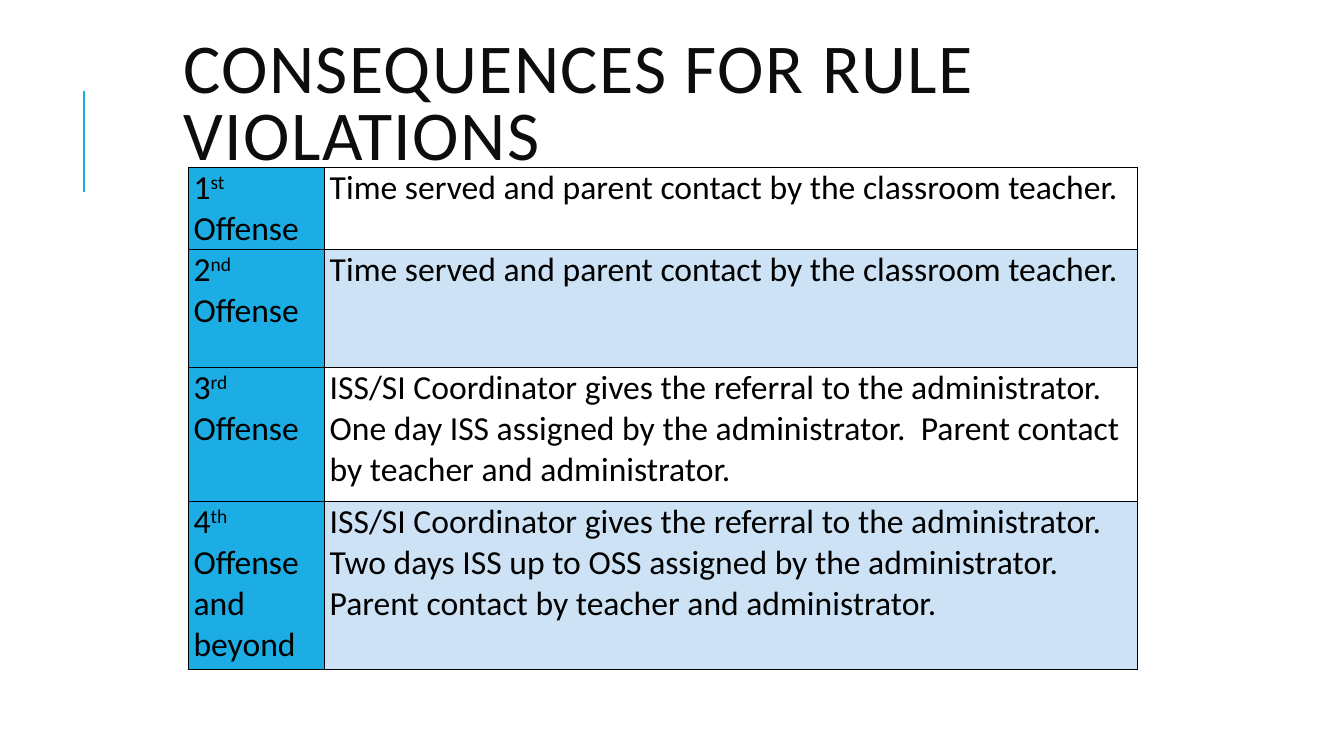
"""Build the slide on consequences for rule violations."""
from lxml.etree import SubElement as Sub
from pptx import Presentation
from pptx.dml.color import RGBColor
from pptx.enum.shapes import MSO_CONNECTOR as Link
from pptx.enum.text import MSO_ANCHOR as Anchor, MSO_AUTO_SIZE as Fit, PP_ALIGN as Align
from pptx.oxml.ns import qn
from pptx.util import Pt

PX = 9144
BLUE = RGBColor(0x1C, 0xAD, 0xE4)
PALE = RGBColor(0xCD, 0xE3, 0xF5)
WHITE = RGBColor(0xFF, 0xFF, 0xFF)
BLACK = RGBColor(0x00, 0x00, 0x00)
INK = RGBColor(0x0D, 0x0D, 0x0D)

HEAD = {"name": "Calibri", "size": Pt(50), "bold": False}
BODY = {"name": "Calibri", "size": Pt(24), "bold": False}
INSET = {"margin_left": 5 * PX, "margin_right": 5 * PX,
         "margin_top": 0, "margin_bottom": 0}
COLS = [135, 806]
SERVED = "Time served and parent contact by the classroom teacher."
REFER = "ISS/SI Coordinator gives the referral to the administrator."
ROWS = [
    (75, "1", "st", " Offense", SERVED),
    (117, "2", "nd", " Offense", SERVED),
    (133, "3", "rd", " Offense",
     REFER + " One day ISS assigned by the administrator.  "
     "Parent contact by teacher and administrator."),
    (167, "4", "th", " Offense and beyond",
     REFER + "  Two days ISS up to OSS assigned by the administrator. "
     "Parent contact by teacher and administrator."),
]


def assign(item, values):
    """Set each attribute of an item from a dict."""
    for key, value in values.items():
        setattr(item, key, value)


def place(left, top, width, height):
    """Turn px lengths into a dict of EMU lengths."""
    return {"left": left * PX, "top": top * PX,
            "width": width * PX, "height": height * PX}


def add_run(para, text, look, color, **extra):
    """Add a styled run with extra run properties."""
    run = para.add_run()
    run.text = text
    assign(run.font, look)
    run.font.color.rgb = color
    props = run.font._element if hasattr(run.font, "_element") else run._r.get_or_add_rPr()
    for key, value in extra.items():
        props.set(key, value)


def add_title(slide, text):
    """Place and fill the title."""
    title = slide.shapes.title
    assign(title, place(172, 24, 1063, 164))
    assign(title.text_frame, {"word_wrap": True, "auto_size": Fit.NONE,
                              "vertical_anchor": Anchor.MIDDLE})
    para = title.text_frame.paragraphs[0]
    assign(para, {"alignment": Align.LEFT, "line_spacing": 0.8})
    add_run(para, text, HEAD, INK, spc="100")


def add_rule(slide):
    """Draw the accent line beside the title."""
    x = 83 * PX
    rule = slide.shapes.add_connector(Link.STRAIGHT, x, 190 * PX, x, 90 * PX)
    rule.line.color.rgb = BLUE
    rule.line.width = Pt(1.5)
    Sub(rule._element.spPr, qn("a:effectLst"))


def style_cell(cell, color):
    """Give a cell its inset, borders and fill."""
    assign(cell, INSET)
    props = cell._tc.get_or_add_tcPr()
    for side in "LRTB":
        edge = Sub(props, qn("a:ln" + side), w=str(Pt(1)))
        paint = Sub(edge, qn("a:solidFill"))
        Sub(paint, qn("a:srgbClr"), val=str(BLACK))
    cell.fill.solid()
    cell.fill.fore_color.rgb = color


def add_grid(slide):
    """Add the table of offenses."""
    box = place(187, 166, sum(COLS), sum(row[0] for row in ROWS))
    grid = slide.shapes.add_table(len(ROWS), len(COLS), **box).table
    assign(grid, {"first_row": False, "horz_banding": False})
    for col, width in zip(grid.columns, COLS):
        col.width = width * PX
    for i, (height, count, suffix, label, text) in enumerate(ROWS):
        grid.rows[i].height = height * PX
        left, right = grid.cell(i, 0), grid.cell(i, 1)
        style_cell(left, BLUE)
        style_cell(right, PALE if i % 2 else WHITE)
        para = left.text_frame.paragraphs[0]
        add_run(para, count, BODY, BLACK)
        add_run(para, suffix, BODY, BLACK, baseline="30000")
        add_run(para, label, BODY, BLACK)
        add_run(right.text_frame.paragraphs[0], text, BODY, BLACK)


def main():
    """Build and save the deck."""
    deck = Presentation()
    assign(deck, {"slide_width": 1333 * PX, "slide_height": 750 * PX})
    slide = deck.slides.add_slide(deck.slide_layouts[5])
    add_rule(slide)
    add_title(slide, "CONSEQUENCES FOR RULE VIOLATIONS")
    add_grid(slide)
    deck.save("out.pptx")


if __name__ == "__main__":
    main()
